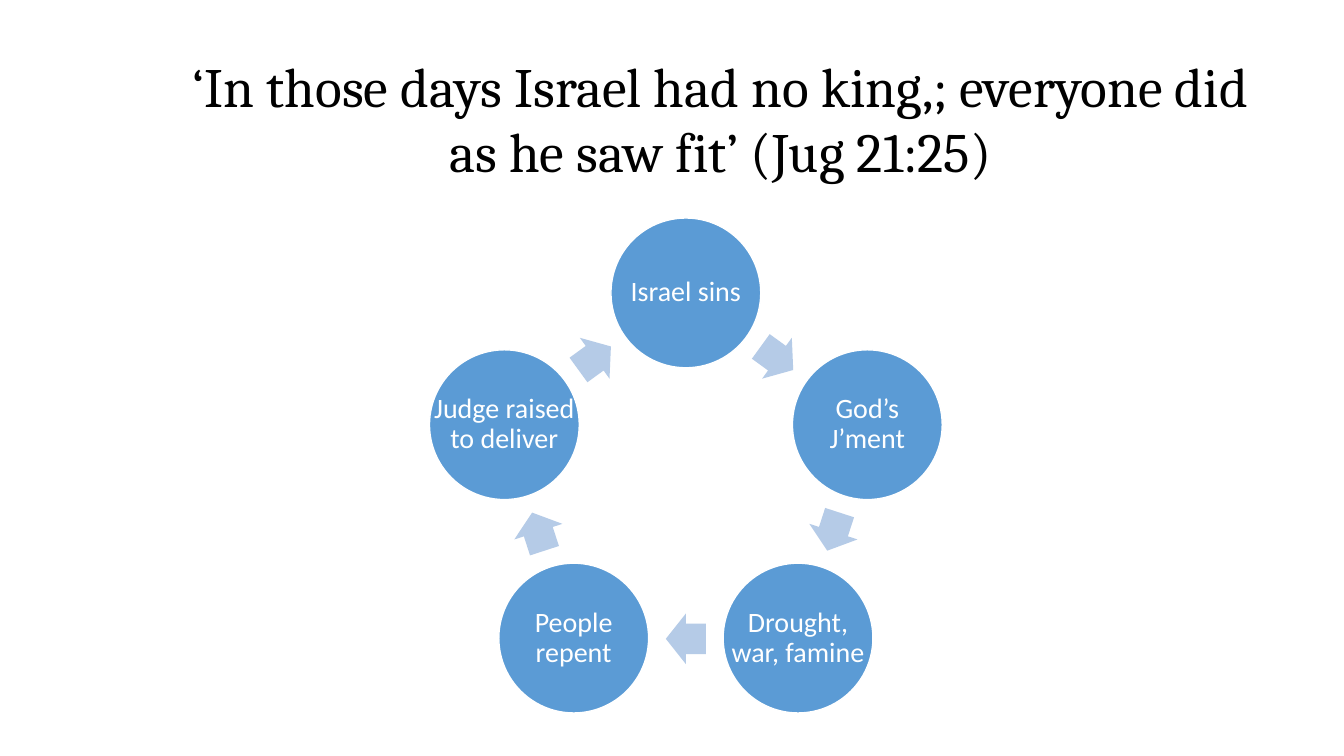
import math
from dataclasses import dataclass

import pptx
import pptx.dml.color
import pptx.enum.shapes
import pptx.enum.text
import pptx.util

Pt = pptx.util.Pt
SHAPE = pptx.enum.shapes.MSO_SHAPE
ANCHOR = pptx.enum.text.MSO_ANCHOR
CENTER = pptx.enum.text.PP_ALIGN.CENTER

TITLE = "‘In those days Israel had no king,; everyone did as he saw fit’ (Jug 21:25)"
# Clockwise from the top; each stage is a tuple of lines.
STAGES = [
    ("Israel sins",),
    ("God’s", "J’ment"),
    ("Drought,", "war, famine"),
    ("People", "repent"),
    ("Judge raised", "to deliver"),
]


@dataclass(frozen=True)
class Theme:
    title_font: str = "Cambria"
    body_font: str = "Calibri"
    title_size: float = 39.6
    body_size: float = 20
    ink: str = "000000"
    white: str = "FFFFFF"
    circle: str = "5B9BD5"
    arrow: str = "B5CBE7"


THEME = Theme()
SLIDE_SIZE = (960, 540)
TITLE_BOX = (109.5, 37.4, 810, 139)
TITLE_LEADING = 47
CYCLE_CENTER = (489.9, 345.5)
CIRCLE_ORBIT, ARROW_ORBIT = 136.3, 110.8
CIRCLE_SIZE = (107, 107)
ARROW_SIZE = (28.6, 36.1)
STEP = 360 / len(STAGES)


def rgb(code):
    return pptx.dml.color.RGBColor.from_string(code)


def add_run(p, text, font, size, color):
    r = p.add_run()
    r.text = text
    r.font.name = font
    r.font.size = Pt(size)
    r.font.color.rgb = rgb(color)


def add_on_orbit(s, kind, orbit, degrees, size, color):
    """Add a filled shape centred on an orbit, at degrees clockwise from the top."""
    angle = math.radians(degrees)
    x = CYCLE_CENTER[0] + orbit * math.sin(angle)
    y = CYCLE_CENTER[1] - orbit * math.cos(angle)
    w, h = size
    sp = s.shapes.add_shape(kind, Pt(x - w / 2), Pt(y - h / 2), Pt(w), Pt(h))
    sp.shadow.inherit = False
    sp.fill.solid()
    sp.fill.fore_color.rgb = rgb(color)
    return sp


def add_title(s):
    tf = s.shapes.add_textbox(*map(Pt, TITLE_BOX)).text_frame
    tf.word_wrap = True
    tf.vertical_anchor = ANCHOR.TOP
    tf.margin_top = tf.margin_bottom = 0
    p = tf.paragraphs[0]
    p.alignment = CENTER
    p.line_spacing = Pt(TITLE_LEADING)
    add_run(p, TITLE, THEME.title_font, THEME.title_size, THEME.ink)


def add_stage(s, lines, degrees):
    sp = add_on_orbit(s, SHAPE.OVAL, CIRCLE_ORBIT, degrees, CIRCLE_SIZE, THEME.circle)
    sp.line.color.rgb = rgb(THEME.white)
    sp.line.width = Pt(1)
    tf = sp.text_frame
    tf.word_wrap = False
    tf.vertical_anchor = ANCHOR.MIDDLE
    tf.margin_left = tf.margin_right = tf.margin_top = tf.margin_bottom = Pt(2)
    p = tf.paragraphs[0]
    p.alignment = CENTER
    p.line_spacing = 0.9
    for i, line in enumerate(lines):
        if i:
            p.add_line_break()
        add_run(p, line, THEME.body_font, THEME.body_size, THEME.white)


def add_arrow(s, degrees):
    sp = add_on_orbit(s, SHAPE.RIGHT_ARROW, ARROW_ORBIT, degrees, ARROW_SIZE, THEME.arrow)
    sp.line.fill.background()
    sp.adjustments[0] = 0.6
    sp.adjustments[1] = 0.5
    sp.rotation = degrees


def main():
    prs = pptx.Presentation()
    prs.slide_width, prs.slide_height = map(Pt, SLIDE_SIZE)
    s = prs.slides.add_slide(prs.slide_layouts[6])
    add_title(s)
    for i, lines in enumerate(STAGES):
        add_stage(s, lines, i * STEP)
        add_arrow(s, (i + 0.5) * STEP)
    prs.save("out.pptx")


if __name__ == "__main__":
    main()
